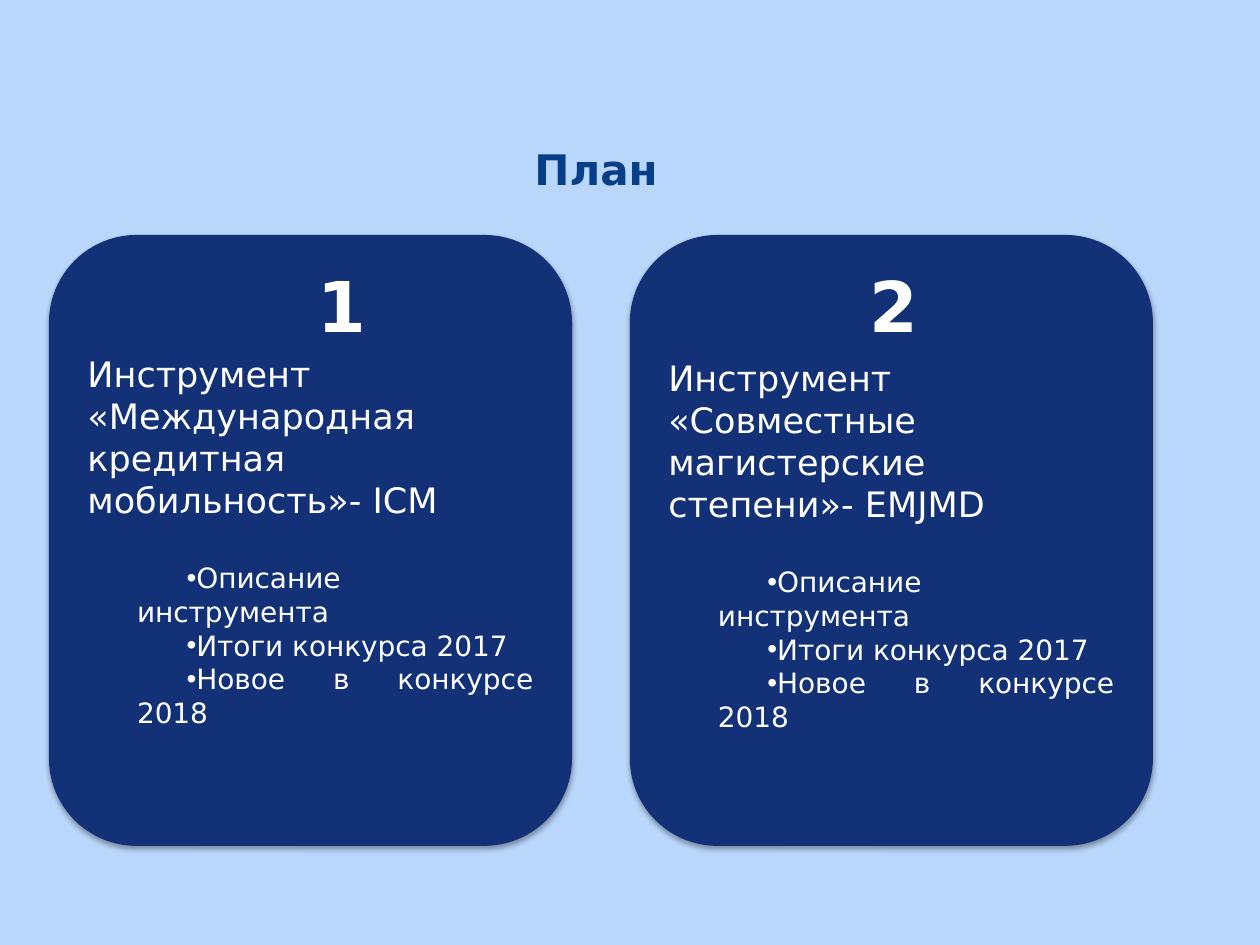
from lxml.etree import SubElement
from pptx import Presentation
from pptx.dml.color import RGBColor
from pptx.enum.shapes import MSO_SHAPE
from pptx.enum.text import MSO_ANCHOR, MSO_AUTO_SIZE, PP_ALIGN
from pptx.oxml.ns import qn
from pptx.util import Cm, Pt

# Content
TITLE = "План"
TOPICS = ["Описание инструмента", "Итоги конкурса 2017", "Новое в конкурсе 2018"]
CARDS = [
    {"number": "1", "heading": "Инструмент «Международная кредитная мобильность»- ICM",
     "number_left": 6.15, "top_inset": 0.13},
    {"number": "2", "heading": "Инструмент «Совместные магистерские степени»- EMJMD",
     "number_left": 17.27, "top_inset": 0.29},
]

# Layout in centimetres
CARD_LEFT, CARD_TOP, CARD_WIDTH, CARD_HEIGHT = 1, 4.75, 10.52, 12.29
CARD_STEP = 11.71
NUMBER_TOP, NUMBER_WIDTH, NUMBER_HEIGHT = 5.16, 1.52, 1.96
BULLET_INDENT = 1

# Formats
FONT = "DejaVu Sans"
BACKGROUND, CARD_COLOUR = "B9D6FB", "133176"
TITLE_FORMAT = {"name": FONT, "size": Pt(24), "bold": True, "colour": "073E87"}
NUMBER_FORMAT = {"name": FONT, "size": Pt(40), "bold": True, "colour": "FFFFFF"}
HEADING_FORMAT = {"name": FONT, "size": Pt(20), "colour": "FFFFFF"}
TOPIC_FORMAT = {"name": FONT, "size": Pt(16), "colour": "FFFFFF"}


def paint(color_format, hex_colour):
    color_format.rgb = RGBColor.from_string(hex_colour)


def write(paragraph, text, text_format, alignment):
    run = paragraph.add_run()
    run.text = text
    paragraph.alignment = alignment
    for name, value in text_format.items():
        if name == "colour":
            run.font.fill.solid()
            paint(run.font.fill.fore_color, value)
        else:
            setattr(run.font, name, value)


def write_label(shape, text, text_format):
    frame = shape.text_frame
    frame.word_wrap = False
    frame.auto_size = MSO_AUTO_SIZE.SHAPE_TO_FIT_TEXT
    frame.vertical_anchor = MSO_ANCHOR.TOP
    write(frame.paragraphs[0], text, text_format, PP_ALIGN.LEFT)


def add_bullet(paragraph):
    properties = paragraph._p.get_or_add_pPr()
    properties.set("marL", str(Cm(BULLET_INDENT)))
    properties.set("indent", str(Cm(BULLET_INDENT)))
    SubElement(properties, qn("a:buFont"), typeface="Arial")
    SubElement(properties, qn("a:buChar"), char="•")


def add_shadow(shape):
    shape.shadow.inherit = False
    effects = shape._element.spPr.find(qn("a:effectLst"))
    shadow = SubElement(effects, qn("a:outerShdw"), blurRad=str(Pt(3.1)),
                        dist=str(Pt(1.8)), dir="5400000", rotWithShape="0")
    colour = SubElement(shadow, qn("a:srgbClr"), val="000000")
    SubElement(colour, qn("a:alpha"), val="35000")


def add_card(slide, index, card):
    shape = slide.shapes.add_shape(
        MSO_SHAPE.ROUNDED_RECTANGLE, Cm(CARD_LEFT + index * CARD_STEP), Cm(CARD_TOP),
        Cm(CARD_WIDTH), Cm(CARD_HEIGHT))
    shape.fill.solid()
    paint(shape.fill.fore_color, CARD_COLOUR)
    paint(shape.line.color, CARD_COLOUR)
    shape.line.width = Pt(0.75)
    add_shadow(shape)

    frame = shape.text_frame
    frame.word_wrap = True
    frame.vertical_anchor = MSO_ANCHOR.MIDDLE
    frame.margin_top = Cm(card["top_inset"])
    write(frame.paragraphs[0], card["heading"], HEADING_FORMAT, PP_ALIGN.JUSTIFY)
    for position, topic in enumerate(TOPICS):
        paragraph = frame.add_paragraph()
        write(paragraph, topic, TOPIC_FORMAT, PP_ALIGN.JUSTIFY)
        paragraph.space_before = Pt(0 if position else 23.3)
        add_bullet(paragraph)


def main():
    presentation = Presentation()
    presentation.slide_width, presentation.slide_height = Cm(25.4), Cm(19.05)
    slide = presentation.slides.add_slide(presentation.slide_layouts[5])
    slide.background.fill.solid()
    paint(slide.background.fill.fore_color, BACKGROUND)

    # Title
    title = slide.shapes.title
    title.left, title.top, title.width, title.height = Cm(10.52), Cm(2.77), Cm(3.02), Cm(1.27)
    write_label(title, TITLE, TITLE_FORMAT)

    # Cards, then their numbers on top
    for index, card in enumerate(CARDS):
        add_card(slide, index, card)
    for card in CARDS:
        number = slide.shapes.add_textbox(Cm(card["number_left"]), Cm(NUMBER_TOP),
                                          Cm(NUMBER_WIDTH), Cm(NUMBER_HEIGHT))
        write_label(number, card["number"], NUMBER_FORMAT)

    presentation.save("out.pptx")


if __name__ == "__main__":
    main()
